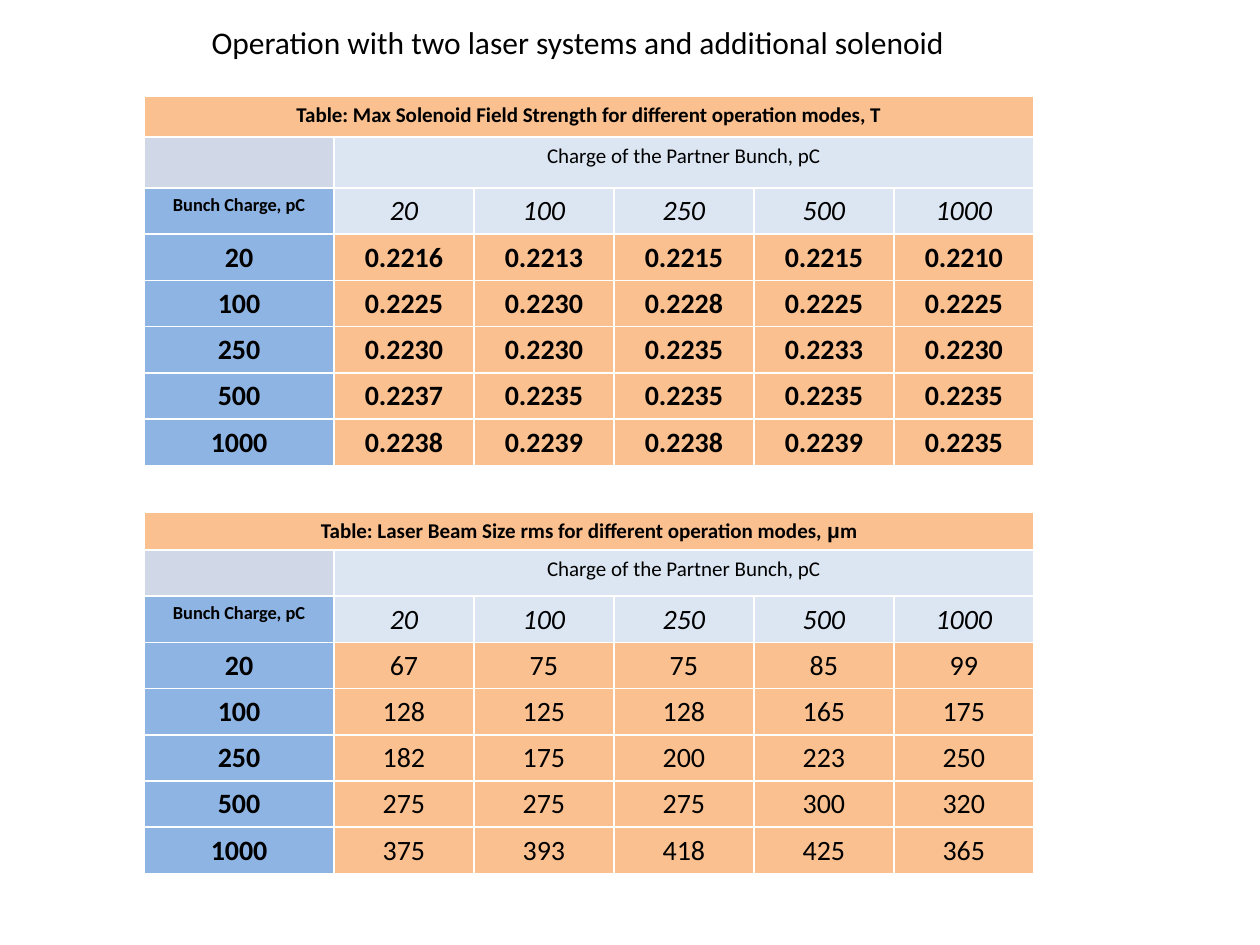
from pptx import Presentation
from pptx.dml.color import RGBColor
from pptx.enum import text
from pptx.util import Pt

BLACK = RGBColor(0x00, 0x00, 0x00)
ORANGE = RGBColor(0xFA, 0xC0, 0x90)
BLUE = RGBColor(0x8E, 0xB4, 0xE3)
PALE_BLUE = RGBColor(0xDC, 0xE6, 0xF2)
GREY_BLUE = RGBColor(0xD0, 0xD8, 0xE8)

CHARGES = [20, 100, 250, 500, 1000]
FIELD_STRENGTHS = [
    ["0.2216", "0.2213", "0.2215", "0.2215", "0.2210"],
    ["0.2225", "0.2230", "0.2228", "0.2225", "0.2225"],
    ["0.2230", "0.2230", "0.2235", "0.2233", "0.2230"],
    ["0.2237", "0.2235", "0.2235", "0.2235", "0.2235"],
    ["0.2238", "0.2239", "0.2238", "0.2239", "0.2235"],
]
BEAM_SIZES = [
    [67, 75, 75, 85, 99],
    [128, 125, 128, 165, 175],
    [182, 175, 200, 223, 250],
    [275, 275, 275, 300, 320],
    [375, 393, 418, 425, 365],
]


class SlideBuilder:
    font_name = "Calibri"
    symbol_font = "Arial"
    label_width = 108.4
    value_width = 80
    row_height = 26.4

    def __init__(self, slide):
        self.slide = slide

    def style(self, paragraph, size, bold=False, italic=False):
        paragraph.alignment = text.PP_ALIGN.CENTER
        font = paragraph.font
        font.name = self.font_name
        font.size = Pt(size)
        font.bold = bold
        font.italic = italic
        font.color.rgb = BLACK

    def title(self, wording, left, top, width, height):
        title = self.slide.shapes.title
        title.left, title.top = Pt(left), Pt(top)
        title.width, title.height = Pt(width), Pt(height)
        frame = title.text_frame
        frame.text = wording
        frame.word_wrap = False
        frame.auto_size = text.MSO_AUTO_SIZE.SHAPE_TO_FIT_TEXT
        self.style(frame.paragraphs[0], 18)

    def cell(self, cell, wording, fill, size=16, bold=False, italic=False):
        cell.fill.solid()
        cell.fill.fore_color.rgb = fill
        paragraph = cell.text_frame.paragraphs[0]
        self.style(paragraph, size, bold, italic)
        for part in str(wording).partition("μ"):
            if part:
                run = paragraph.add_run()
                run.text = part
                if part == "μ":
                    run.font.name = self.symbol_font

    def charge_table(self, caption, values, top, head_heights, bold_values):
        widths = [self.label_width] + [self.value_width] * len(CHARGES)
        heights = head_heights + [self.row_height] * (len(values) + 1)
        table = self.slide.shapes.add_table(
            len(heights), len(widths), Pt(82.4), Pt(top),
            Pt(sum(widths)), Pt(sum(heights))).table
        for column, width in zip(table.columns, widths):
            column.width = Pt(width)
        for row, height in zip(table.rows, heights):
            row.height = Pt(height)

        last = len(CHARGES)
        table.cell(0, 0).merge(table.cell(0, last))
        table.cell(1, 1).merge(table.cell(1, last))
        self.cell(table.cell(0, 0), caption, ORANGE, 12, bold=True)
        self.cell(table.cell(1, 0), "", GREY_BLUE, 12)
        self.cell(table.cell(1, 1), "Charge of the Partner Bunch, pC", PALE_BLUE, 12)
        self.cell(table.cell(2, 0), "Bunch Charge, pC", BLUE, 10.5, bold=True)
        for column, charge in enumerate(CHARGES, 1):
            self.cell(table.cell(2, column), charge, PALE_BLUE, italic=True)
        for row, (charge, line) in enumerate(zip(CHARGES, values), 3):
            self.cell(table.cell(row, 0), charge, BLUE, bold=True)
            for column, value in enumerate(line, 1):
                self.cell(table.cell(row, column), value, ORANGE, bold=bold_values)


def main():
    presentation = Presentation()
    presentation.slide_width, presentation.slide_height = Pt(720), Pt(540)
    title_only = presentation.slide_layouts[5]
    builder = SlideBuilder(presentation.slides.add_slide(title_only))
    builder.title("Operation with two laser systems and additional solenoid",
                  111, 9.4, 438.5, 28.8)
    builder.charge_table(
        "Table: Max Solenoid Field Strength for different operation modes, T",
        FIELD_STRENGTHS, 54.8, [23.6, 29], True)
    builder.charge_table(
        "Table: Laser Beam Size rms for different operation modes, μm",
        BEAM_SIZES, 292.6, [21.4, 26.4], False)
    presentation.save("out.pptx")


if __name__ == "__main__":
    main()
